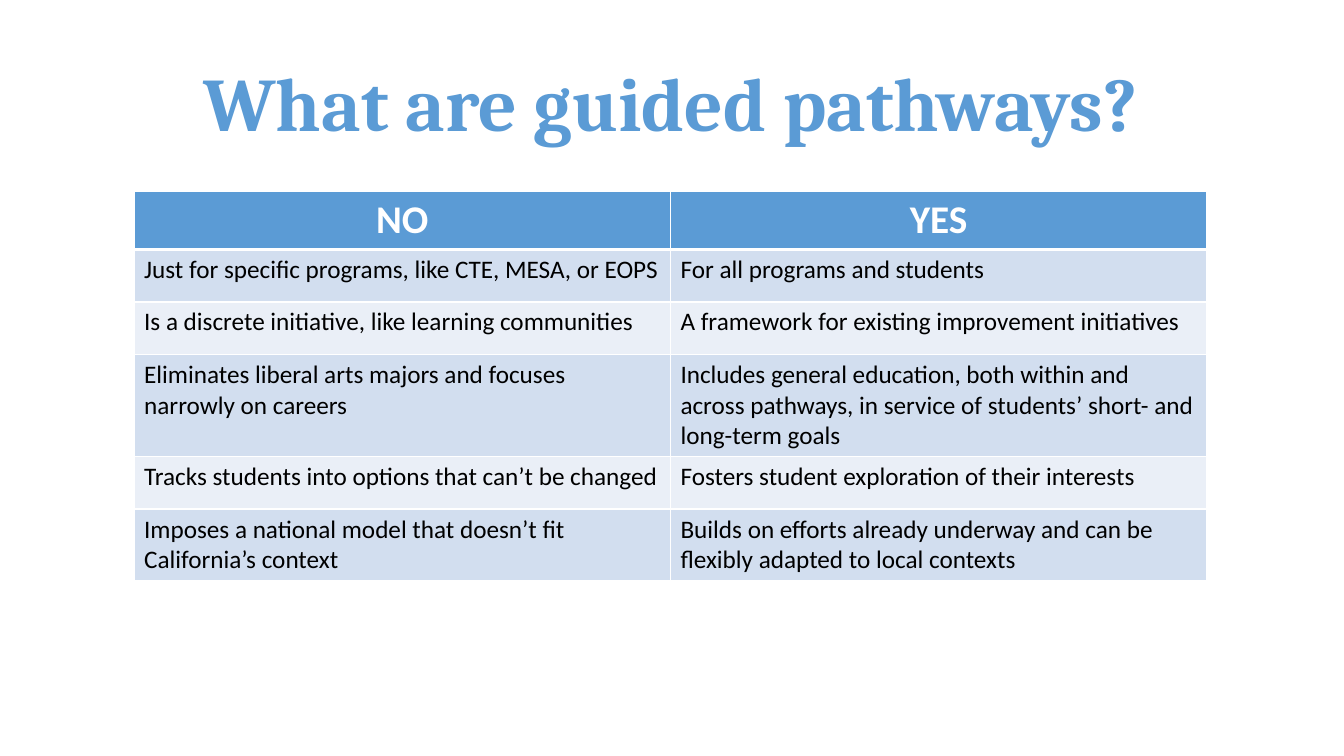
import pptx
import pptx.dml.color
import pptx.enum.text
import pptx.util
from lxml import etree
from pptx.oxml.ns import qn

Inches = pptx.util.Inches
Pt = pptx.util.Pt
RGBColor = pptx.dml.color.RGBColor
CENTER = pptx.enum.text.PP_ALIGN.CENTER
LEFT = pptx.enum.text.PP_ALIGN.LEFT

BLUE = RGBColor(0x5B, 0x9B, 0xD5)
DARK_BAND = RGBColor(0xD2, 0xDE, 0xEF)
LIGHT_BAND = RGBColor(0xEA, 0xEF, 0xF7)
WHITE = RGBColor(0xFF, 0xFF, 0xFF)
BLACK = RGBColor(0x00, 0x00, 0x00)

TITLE_ONLY_LAYOUT = 5
ROWS = [
    ("NO", "YES"),
    ("Just for specific programs, like CTE, MESA, or EOPS",
     "For all programs and students"),
    ("Is a discrete initiative, like learning communities",
     "A framework for existing improvement initiatives"),
    ("Eliminates liberal arts majors and focuses narrowly on careers",
     "Includes general education, both within and across pathways, "
     "in service of students’ short- and long-term goals"),
    ("Tracks students into options that can’t be changed",
     "Fosters student exploration of their interests"),
    ("Imposes a national model that doesn’t fit California’s context",
     "Builds on efforts already underway and can be flexibly adapted "
     "to local contexts"),
]


def format_para(para, font_name, size, color, bold, alignment):
    para.alignment = alignment
    for span in para.runs:
        span.font.name = font_name
        span.font.size = Pt(size)
        span.font.bold = bold
        span.font.color.rgb = color


def set_border(cell, side, points):
    """Draw a white border; side is L, R, T or B."""
    properties = cell._tc.get_or_add_tcPr()
    line = etree.SubElement(properties, qn(f"a:ln{side}"), w=str(Pt(points)))
    fill = etree.SubElement(line, qn("a:solidFill"))
    etree.SubElement(fill, qn("a:srgbClr"), val=str(WHITE))


def add_title(page, left, top, width, height):
    title = page.shapes.title
    title.left, title.top, title.width, title.height = left, top, width, height
    frame = title.text_frame
    frame.text = "What are guided pathways?"
    frame.word_wrap = True
    frame.auto_size = pptx.enum.text.MSO_AUTO_SIZE.NONE
    frame.vertical_anchor = pptx.enum.text.MSO_ANCHOR.TOP
    para = frame.paragraphs[0]
    para.line_spacing = 0.9
    format_para(para, "Cambria", 54, BLUE, True, CENTER)


def add_comparison(page, left, top, width, row_height):
    table = page.shapes.add_table(
        len(ROWS), 2, left, top, width, row_height * len(ROWS)).table
    for row_index, texts in enumerate(ROWS):
        is_header = row_index == 0
        band = DARK_BAND if row_index % 2 else LIGHT_BAND
        for column_index, text in enumerate(texts):
            cell = table.cell(row_index, column_index)
            for side in "LRTB":
                below_header = (is_header and side == "B") or (row_index == 1 and side == "T")
                set_border(cell, side, 3 if below_header else 1)
            cell.fill.solid()
            cell.fill.fore_color.rgb = BLUE if is_header else band
            cell.text_frame.text = text
            para = cell.text_frame.paragraphs[0]
            if is_header:
                format_para(para, "Calibri", 28, WHITE, True, CENTER)
            else:
                format_para(para, "Calibri", 18, BLACK, False, LEFT)


def main():
    deck = pptx.Presentation()
    deck.slide_width, deck.slide_height = Inches(13.33), Inches(7.5)
    page = deck.slides.add_slide(deck.slide_layouts[TITLE_ONLY_LAYOUT])
    add_title(page, Inches(0.9), Inches(0.61), Inches(11.5), Inches(1.1))
    add_comparison(page, Inches(1.33), Inches(1.9), Inches(10.64), Inches(0.52))
    deck.save("out.pptx")


if __name__ == "__main__":
    main()
